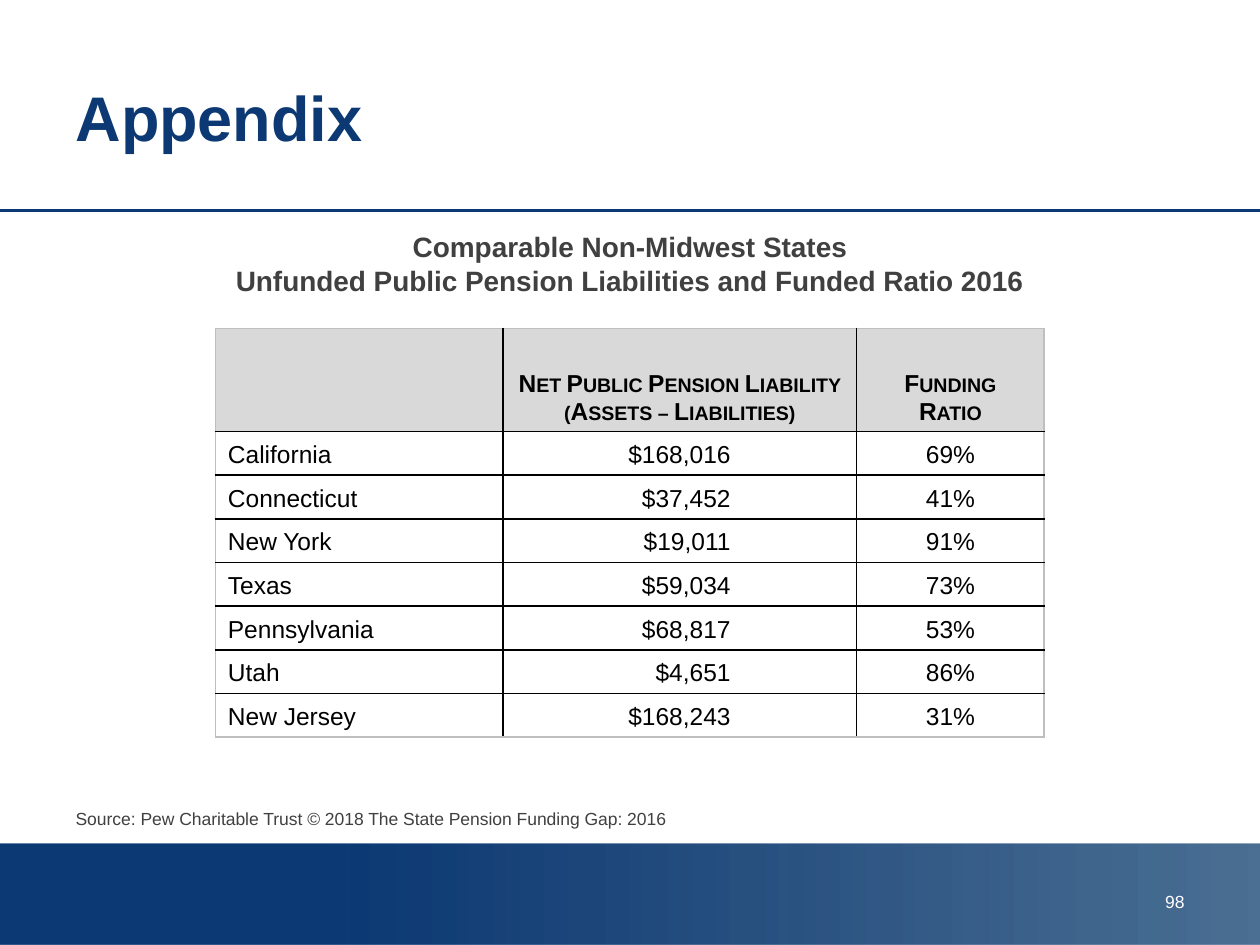
from copy import deepcopy
from dataclasses import dataclass

from lxml.etree import SubElement
from pptx import Presentation
from pptx.dml.color import RGBColor
from pptx.enum.shapes import MSO_CONNECTOR, MSO_SHAPE
from pptx.enum.text import MSO_ANCHOR, MSO_AUTO_SIZE, PP_ALIGN
from pptx.oxml.ns import qn
from pptx.util import Cm, Pt

NAVY, GRAY, BLACK, WHITE = "0C3873", "404040", "000000", "FFFFFF"
HEADER_FILL, OUTER_LINE = "D9D9D9", "BFBFBF"
PAGE_WIDTH, PAGE_HEIGHT = Cm(25.4), Cm(19.05)
LEFT, CENTER, RIGHT = PP_ALIGN.LEFT, PP_ALIGN.CENTER, PP_ALIGN.RIGHT


@dataclass
class State:
    name: str
    liability: str
    ratio: str


STATES = [
    State("California", "$168,016", "69%"),
    State("Connecticut", "$37,452", "41%"),
    State("New York", "$19,011", "91%"),
    State("Texas", "$59,034", "73%"),
    State("Pennsylvania", "$68,817", "53%"),
    State("Utah", "$4,651", "86%"),
    State("New Jersey", "$168,243", "31%"),
]
HEADERS = ["", "Net Public Pension Liability\v(Assets – Liabilities)", "Funding\vRatio"]
COLUMN_WIDTHS = [Cm(5.8), Cm(7.13), Cm(3.78)]
ALIGNMENTS = [LEFT, RIGHT, CENTER]


def color(value: str) -> RGBColor:
    return RGBColor.from_string(value)


def write(para, text: str, *, size: float, ink: str, bold: bool = False, align=LEFT,
          small_caps: bool = False, before: float = 0, line=None) -> None:
    """Fill a paragraph; line breaks take the format of the text."""
    para.text = text
    para.alignment = align
    para.space_before = Pt(before)
    if line:
        para.line_spacing = Pt(line)
    for span in para.runs:
        span.font.name = "Arial"
        span.font.size = Pt(size)
        span.font.bold = bold
        span.font.color.rgb = color(ink)
        if small_caps:
            span.font._element.set("cap", "small")
    for line_break in para._p.findall(qn("a:br")):
        line_break.append(deepcopy(para.runs[0].font._element))


def place(box, left, top, width, height) -> None:
    box.left, box.top, box.width, box.height = left, top, width, height
    box.text_frame.word_wrap = True
    box.text_frame.auto_size = MSO_AUTO_SIZE.NONE


def remove_bullet(para) -> None:
    properties = para._p.get_or_add_pPr()
    properties.set("marL", "0")
    properties.set("indent", "0")
    SubElement(properties, qn("a:buNone"))


def set_border(cell, side: str, ink: str) -> None:
    border = SubElement(cell._tc.get_or_add_tcPr(), qn(f"a:ln{side}"), w=str(Pt(1)))
    fill = SubElement(border, qn("a:solidFill"))
    SubElement(fill, qn("a:srgbClr"), val=ink)


def add_band(page) -> None:
    band = page.shapes.add_shape(MSO_SHAPE.RECTANGLE, 0, Cm(17), PAGE_WIDTH, Cm(2.05))
    band.shadow.inherit = False
    band.line.fill.background()
    band.fill.gradient()
    band.fill.gradient_angle = 0
    start, end = band.fill.gradient_stops
    start.position, end.position = 0.25, 1
    start.color.rgb, end.color.rgb = color(NAVY), color("003366")
    tint = band._element.spPr.findall(".//" + qn("a:srgbClr"))[-1]
    SubElement(tint, qn("a:alpha"), val="70000")


def add_rule(page) -> None:
    rule = page.shapes.add_connector(MSO_CONNECTOR.STRAIGHT, 0, Cm(4.24), PAGE_WIDTH, Cm(4.24))
    rule.line.color.rgb = color(NAVY)
    rule.line.width = Pt(2)
    SubElement(rule._element.spPr, qn("a:effectLst"))


def add_pension_table(page) -> None:
    rows = [HEADERS] + [[state.name, state.liability, state.ratio] for state in STATES]
    last_row, last_column = len(rows) - 1, len(HEADERS) - 1
    table = page.shapes.add_table(len(rows), len(HEADERS), Cm(4.34), Cm(6.62),
                                  sum(COLUMN_WIDTHS), Cm(8.24)).table
    table.first_row = table.horz_banding = False
    for column, width in zip(table.columns, COLUMN_WIDTHS):
        column.width = width
    for r, texts in enumerate(rows):
        header = r == 0
        table.rows[r].height = Cm(2.08) if header else Cm(0.88)
        for c, text in enumerate(texts):
            cell = table.cell(r, c)
            cell.vertical_anchor = MSO_ANCHOR.BOTTOM
            outer = {"L": c == 0, "R": c == last_column, "T": header, "B": r == last_row}
            for side, is_outer in outer.items():
                set_border(cell, side, OUTER_LINE if is_outer else BLACK)
            if header:
                cell.fill.solid()
                cell.fill.fore_color.rgb = color(HEADER_FILL)
            else:
                cell.fill.background()
            align = CENTER if header else ALIGNMENTS[c]
            if align == RIGHT:
                cell.margin_right = Cm(2.54)
            write(cell.text_frame.paragraphs[0], text, size=14, ink=BLACK, bold=header,
                  align=align, small_caps=header, line=16)


def main() -> None:
    deck = Presentation()
    deck.slide_width, deck.slide_height = PAGE_WIDTH, PAGE_HEIGHT
    page = deck.slides.add_slide(deck.slide_layouts[1])

    # Footer band and title rule
    add_band(page)
    add_rule(page)

    # Title
    title = page.shapes.title
    place(title, Cm(1.27), Cm(0.76), Cm(22.86), Cm(3.18))
    title.text_frame.vertical_anchor = MSO_ANCHOR.MIDDLE
    write(title.text_frame.paragraphs[0], "Appendix", size=36, ink=NAVY, bold=True)

    # Table heading and source line
    body = page.placeholders[1]
    place(body, Cm(1.27), Cm(4.5), Cm(22.86), Cm(12.5))
    heading = body.text_frame.paragraphs[0]
    source = body.text_frame.add_paragraph()
    for para in (heading, source):
        remove_bullet(para)
    write(heading, "Comparable Non-Midwest States\v"
          "Unfunded Public Pension Liabilities and Funded Ratio 2016",
          size=16, ink=GRAY, bold=True, align=CENTER)
    write(source, "Source: Pew Charitable Trust © 2018 The State Pension Funding Gap: 2016",
          size=10, ink=GRAY, before=292)

    # Table
    add_pension_table(page)

    # Page number
    number = page.shapes.add_textbox(0, 0, 0, 0)
    place(number, Cm(18.21), Cm(17.83), Cm(5.92), Cm(1.02))
    write(number.text_frame.paragraphs[0], "98", size=10, ink=WHITE, align=RIGHT)

    deck.save("out.pptx")


if __name__ == "__main__":
    main()
